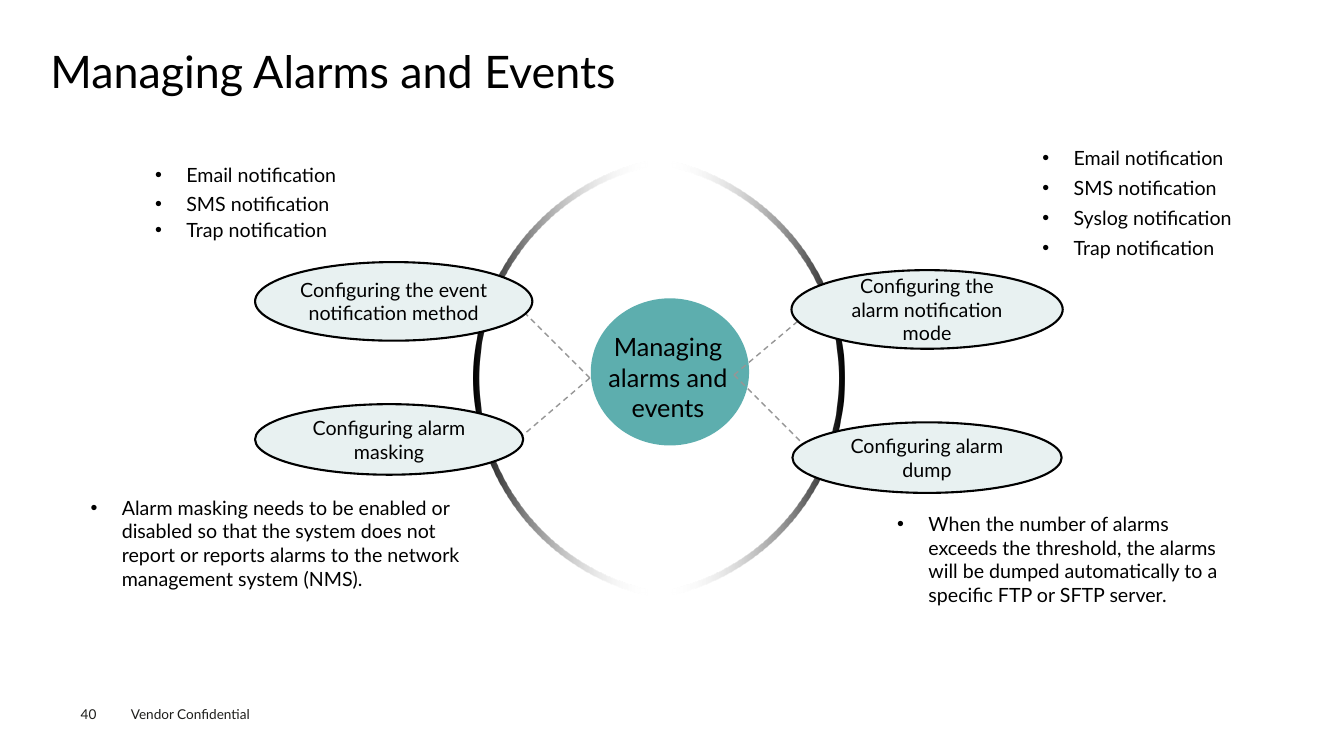
from lxml.etree import SubElement
from pptx import Presentation
from pptx.dml.color import RGBColor
from pptx.enum.dml import MSO_LINE
from pptx.enum.shapes import MSO_CONNECTOR, MSO_SHAPE
from pptx.enum.text import MSO_ANCHOR, PP_ALIGN
from pptx.oxml.ns import qn
from pptx.util import Inches, Pt

BLACK = RGBColor(0x00, 0x00, 0x00)
WHITE = RGBColor(0xFF, 0xFF, 0xFF)
TEAL = RGBColor(0x5D, 0xAE, 0xAE)
PALE_TEAL = RGBColor(0xE8, 0xF1, 0xF1)
GREY = RGBColor(0x96, 0x96, 0x96)
FOOTER_INK = RGBColor(0x1D, 0x1D, 0x1B)
FONT = "Lato"
ARC_HANDLE = 0.55  # length of a quarter circle's curve handle per unit radius


def write(shape, text, size=14, color=BLACK, align=PP_ALIGN.LEFT, anchor=MSO_ANCHOR.TOP,
          insets=(0.1, 0.05), bullet=False, line_spacing=None):
    """Fill a shape with one paragraph of text."""
    frame = shape.text_frame
    frame.word_wrap = True
    frame.vertical_anchor = anchor
    frame.margin_left = frame.margin_right = Inches(insets[0])
    frame.margin_top = frame.margin_bottom = Inches(insets[1])
    paragraph = frame.paragraphs[0]
    paragraph.alignment = align
    if line_spacing:
        paragraph.line_spacing = line_spacing
    if bullet:
        properties = paragraph._p.get_or_add_pPr()
        properties.set("marL", str(Inches(0.31)))
        properties.set("indent", str(-Inches(0.31)))
        SubElement(properties, qn("a:buFont"), typeface="Arial")
        SubElement(properties, qn("a:buChar"), char="•")
    run = paragraph.add_run()
    run.text = text
    run.font.name = FONT
    run.font.size = Pt(size)
    run.font.color.rgb = color


class Canvas:
    def __init__(self, slide, ink=BLACK):
        self.shapes = slide.shapes
        self.ink = ink

    def text(self, box, text, **style):
        style.setdefault("color", self.ink)
        write(self.shapes.add_textbox(*map(Inches, box)), text, **style)

    def bullets(self, left, items):
        for top, width, item in items:
            self.text((left, top, width, 0.4), item, bullet=True)

    def ellipse(self, box, fill, outline=None):
        oval = self.shapes.add_shape(MSO_SHAPE.OVAL, *map(Inches, box))
        oval.shadow.inherit = False
        oval.fill.solid()
        oval.fill.fore_color.rgb = fill
        if outline is None:
            oval.line.fill.background()
        else:
            oval.line.color.rgb = outline
            oval.line.width = Pt(1.5)
        return oval

    def topic(self, box, label):
        write(self.ellipse(box, PALE_TEAL, self.ink), label, align=PP_ALIGN.CENTER,
              anchor=MSO_ANCHOR.MIDDLE, insets=(0.04, 0.05))

    def half_ring(self, center_x, side, center_y=3.75, outer=2.21, inner=2.15):
        """Half ring bulging right (side 1) or left (side -1), fading to its ends."""
        handle = ARC_HANDLE
        arc = [(0, -1), (handle, -1), (1, -handle), (1, 0), (1, handle), (handle, 1), (0, 1)]
        rim = [(outer * x, outer * y) for x, y in arc]
        rim += [(inner * x, inner * y) for x, y in arc[::-1]]
        points = [(Inches(center_x + side * x), Inches(center_y + y)) for x, y in rim]
        builder = self.shapes.build_freeform(*points[0])
        builder.add_line_segments(points[1:])
        ring = builder.convert_to_shape()

        # Turn each run of three points into one curve
        segments = list(ring._element.spPr.iter(qn("a:lnTo")))
        for first in (0, 3, 7, 10):
            curve, *rest = segments[first:first + 3]
            curve.tag = qn("a:cubicBezTo")
            for segment in rest:
                curve.append(segment[0])
                segment.getparent().remove(segment)

        ring.shadow.inherit = False
        ring.line.fill.background()
        ring.fill.gradient()
        ring.fill.gradient_angle = 180 if side > 0 else 0
        for stop, color, position in zip(ring.fill.gradient_stops, (BLACK, WHITE), (0, 0.78)):
            stop.color.rgb = color
            stop.position = position
        faded = list(ring._element.spPr.iter(qn("a:srgbClr")))[-1]
        SubElement(faded, qn("a:alpha"), val="0")

    def spoke(self, start, end):
        line = self.shapes.add_connector(MSO_CONNECTOR.STRAIGHT, *map(Inches, start + end))
        line.line.color.rgb = GREY
        line.line.width = Pt(1)
        line.line.dash_style = MSO_LINE.DASH
        SubElement(line._element.spPr, qn("a:effectLst"))


def main():
    deck = Presentation()
    deck.slide_width, deck.slide_height = Inches(13.33), Inches(7.5)
    canvas = Canvas(deck.slides.add_slide(deck.slide_layouts[6]))

    # Footer and title
    canvas.text((1.2, 6.95, 1.6, 0.27), "Vendor Confidential", size=9.7, color=FOOTER_INK)
    canvas.text((0.8, 7, 0.55, 0.16), "40", size=9.7, color=FOOTER_INK, insets=(0, 0))
    canvas.text((0.5, 0.49, 12.35, 0.54), "Managing Alarms and Events", size=32,
                insets=(0, 0), line_spacing=0.9)

    # Hub, half rings and spokes
    canvas.ellipse((5.86, 2.96, 1.57, 1.46), TEAL)
    right_hub, left_hub = (7.28, 3.72), (5.85, 3.75)
    canvas.half_ring(6.16, 1)
    for end in ((8.04, 3.08), (8.04, 4.48)):
        canvas.spoke(right_hub, end)
    canvas.text((5.7, 3.24, 1.85, 1.31), "Managing alarms and events", size=18,
                align=PP_ALIGN.CENTER)
    canvas.half_ring(6.91, -1)
    for end in ((5.09, 4.4), (5.09, 2.99)):
        canvas.spoke(left_hub, end)

    # Topics around the hub
    canvas.topic((2.53, 2.6, 2.75, 0.78), "Configuring the event notification method")
    canvas.topic((7.86, 4.19, 2.67, 0.7), "Configuring alarm dump")
    canvas.topic((2.53, 4.01, 2.66, 0.7), "Configuring alarm masking")
    canvas.topic((7.85, 2.68, 2.69, 0.78), "Configuring the alarm notification mode")

    # Notification channels: alarms on the right, events on the left
    canvas.bullets(10.24, [(1.4, 2.54, "Email notification"), (1.7, 2.41, "SMS notification"),
                           (1.99, 2.63, "Syslog notification"), (2.29, 2.42, "Trap notification")])
    canvas.bullets(1.44, [(1.57, 2.54, "Email notification"), (1.86, 2.41, "SMS notification"),
                          (2.11, 2.42, "Trap notification")])

    # Explanations of dump and masking
    canvas.text((8.8, 5.03, 3.5, 2.37),
                "When the number of alarms exceeds the threshold, the alarms will be dumped "
                "automatically to a specific FTP or SFTP server.", bullet=True)
    canvas.text((0.8, 4.87, 4.03, 2.6),
                "Alarm masking needs to be enabled or disabled so that the system does not report "
                "or reports alarms to the network management system (NMS).", bullet=True)

    deck.save("out.pptx")


if __name__ == "__main__":
    main()
